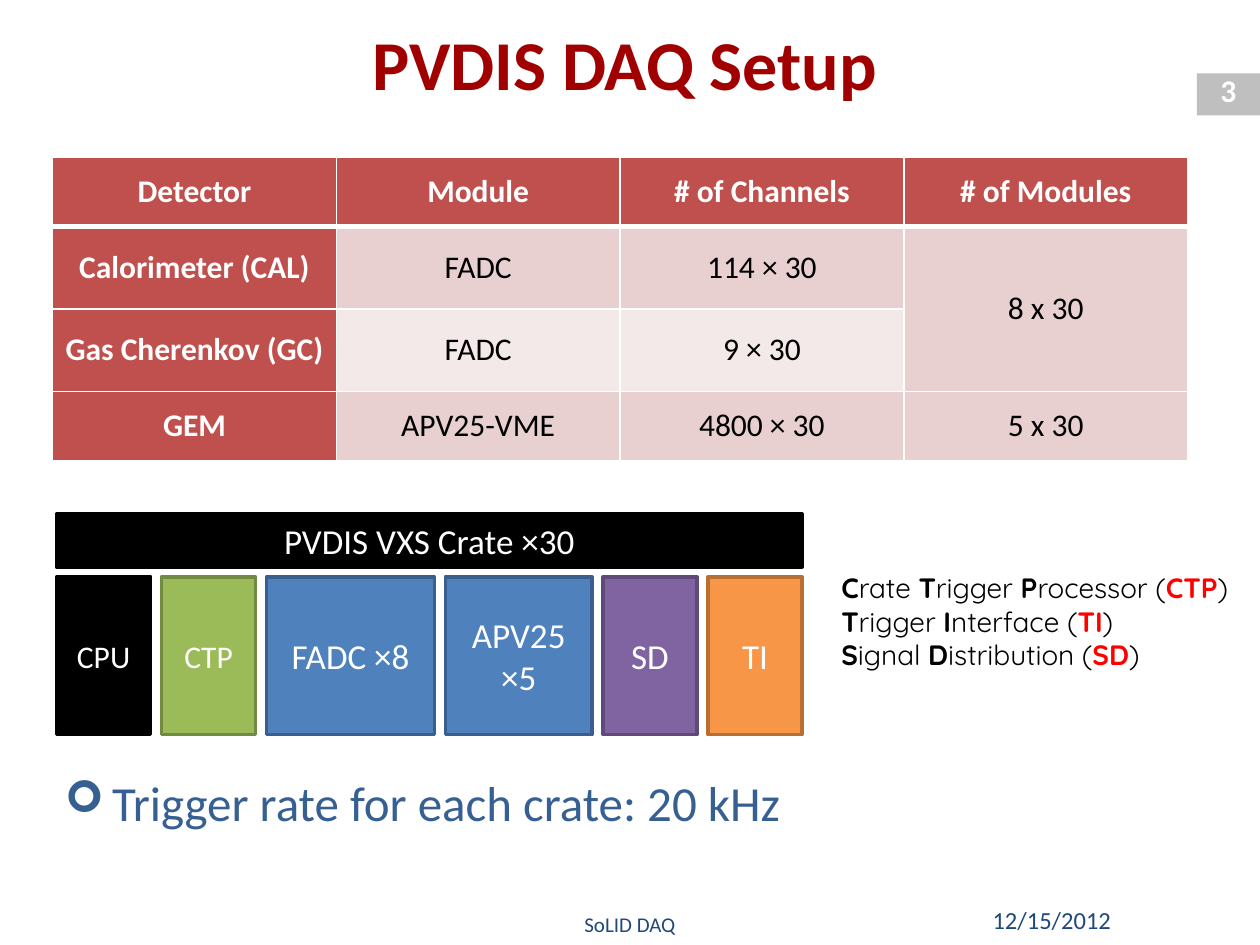
from lxml import etree
from pptx import Presentation
from pptx.dml.color import RGBColor
from pptx.enum.shapes import MSO_SHAPE
from pptx.enum.text import MSO_ANCHOR, PP_ALIGN
from pptx.oxml.ns import qn
from pptx.util import Cm, Pt

RECTANGLE = MSO_SHAPE.RECTANGLE
TOP, MIDDLE = MSO_ANCHOR.TOP, MSO_ANCHOR.MIDDLE
LEFT, CENTER, RIGHT = PP_ALIGN.LEFT, PP_ALIGN.CENTER, PP_ALIGN.RIGHT

WHITE = RGBColor(0xFF, 0xFF, 0xFF)
BLACK = RGBColor(0x00, 0x00, 0x00)
GRAY = RGBColor(0xBF, 0xBF, 0xBF)
TITLE_RED = RGBColor(0xA0, 0x00, 0x00)
LEGEND_RED = RGBColor(0xFF, 0x00, 0x00)
BODY_BLUE = RGBColor(0x37, 0x60, 0x92)
FOOTER_BLUE = RGBColor(0x1F, 0x49, 0x7D)
HEADING_RED = RGBColor(0xC0, 0x50, 0x4D)
BAND_DARK = RGBColor(0xE8, 0xD0, 0xD0)
BAND_LIGHT = RGBColor(0xF4, 0xE9, 0xE9)
BLUE, BLUE_EDGE = RGBColor(0x4F, 0x81, 0xBD), RGBColor(0x3A, 0x5F, 0x8C)
GREEN, GREEN_EDGE = RGBColor(0x9B, 0xBB, 0x59), RGBColor(0x73, 0x8A, 0x42)
PURPLE, PURPLE_EDGE = RGBColor(0x80, 0x64, 0xA2), RGBColor(0x5F, 0x4A, 0x78)
ORANGE, ORANGE_EDGE = RGBColor(0xF7, 0x96, 0x46), RGBColor(0xB7, 0x6F, 0x34)

# Text, box in cm (left, top, width, height), size, colour, bold, alignment, anchor
TITLE = ("PVDIS DAQ Setup", (1.06, 0.21, 23.07, 2.12), 40, TITLE_RED, True, CENTER, MIDDLE)
PAGE_NUMBER = ("3", (24.13, 1.3, 1.27, 1.02), 18, WHITE, True, CENTER, TOP)
TRIGGER_RATE = ("Trigger rate for each crate: 20 kHz", (1.06, 15.45, 23.28, 2.33),
                28, BODY_BLUE, False, LEFT, TOP)
DATE = ("12/15/2012", (19.26, 18.03, 3.39, 1.02), 14, FOOTER_BLUE, False, RIGHT, MIDDLE)
FOOTER = ("SoLID DAQ", (6.14, 18.2, 13.12, 0.85), 12, FOOTER_BLUE, False, CENTER, MIDDLE)

DETECTORS = [
    ("Detector", "Module", "# of Channels", "# of Modules"),
    ("Calorimeter (CAL)", "FADC", "114 × 30", "8 x 30"),
    ("Gas Cherenkov (GC)", "FADC", "9 × 30", ""),
    ("GEM", "APV25-VME", "4800 × 30", "5 x 30"),
]
ROW_HEIGHTS = (1.39, 1.66, 1.66, 1.39)
COLUMN_WIDTH = 5.72

CRATE_LEFT, CRATE_WIDTH = 1.14, 15.03
# Label, width in cm, text size, fill, edge
MODULES = [
    ("CPU", 1.9, 18, BLACK, BLACK),
    ("CTP", 1.9, 18, GREEN, GREEN_EDGE),
    ("FADC ×8", 3.39, 20, BLUE, BLUE_EDGE),
    ("APV25 ×5", 2.96, 20, BLUE, BLUE_EDGE),
    ("SD", 1.9, 20, PURPLE, PURPLE_EDGE),
    ("TI", 1.9, 20, ORANGE, ORANGE_EDGE),
]
LEGEND = [
    ("Crate Trigger Processor", "CTP"),
    ("Trigger Interface", "TI"),
    ("Signal Distribution", "SD"),
]


def style(font, size, color, bold=False, name="Calibri"):
    font.name, font.size, font.bold = name, Pt(size), bold
    font.color.rgb = color


def add_text(slide, text, box, size, color, bold, alignment, anchor):
    frame = slide.shapes.add_textbox(*map(Cm, box)).text_frame
    frame.word_wrap = True
    frame.vertical_anchor = anchor
    paragraph = frame.paragraphs[0]
    paragraph.text = text
    paragraph.alignment = alignment
    style(paragraph.font, size, color, bold)
    return paragraph


def add_block(shapes, box, fill, edge=None, text="", size=20):
    """Add a filled rectangle, with an outline and a centred label if given."""
    shape = shapes.add_shape(RECTANGLE, *map(Cm, box))
    shape.shadow.inherit = False
    shape.fill.solid()
    shape.fill.fore_color.rgb = fill
    if edge is None:
        shape.line.fill.background()
    else:
        shape.line.color.rgb = edge
        shape.line.width = Pt(2)
    if text:
        frame = shape.text_frame
        frame.word_wrap = True
        frame.vertical_anchor = MIDDLE
        paragraph = frame.paragraphs[0]
        paragraph.text = text
        paragraph.alignment = CENTER
        style(paragraph.font, size, WHITE)


def set_indent(paragraph, left, first_line=0):
    properties = paragraph._p.get_or_add_pPr()
    properties.set("marL", str(Cm(left)))
    properties.set("indent", str(Cm(first_line)))
    return properties


def add_bullet(paragraph, character, percent):
    properties = set_indent(paragraph, 0.95, -0.95)
    etree.SubElement(properties, qn("a:buSzPct"), val=str(percent * 1000))
    etree.SubElement(properties, qn("a:buFont"), typeface="Wingdings")
    etree.SubElement(properties, qn("a:buChar"), char=character)


def set_borders(cell, row):
    widths = {"lnL": 1, "lnR": 1, "lnT": 3 if row == 1 else 1, "lnB": 3 if row == 0 else 1}
    for side, width in widths.items():
        line = etree.SubElement(cell._tc.get_or_add_tcPr(), qn(f"a:{side}"), w=str(Pt(width)))
        fill = etree.SubElement(line, qn("a:solidFill"))
        etree.SubElement(fill, qn("a:srgbClr"), val=str(WHITE))


def add_detector_table(slide):
    columns = len(DETECTORS[0])
    table = slide.shapes.add_table(
        len(DETECTORS), columns, Cm(1.06), Cm(3.18),
        Cm(COLUMN_WIDTH * columns), Cm(sum(ROW_HEIGHTS))).table
    for column in table.columns:
        column.width = Cm(COLUMN_WIDTH)
    for row, values in enumerate(DETECTORS):
        table.rows[row].height = Cm(ROW_HEIGHTS[row])
        for column, value in enumerate(values):
            heading = row == 0 or column == 0
            cell = table.cell(row, column)
            set_borders(cell, row)
            cell.fill.solid()
            band = BAND_DARK if row % 2 else BAND_LIGHT
            if row == len(DETECTORS) - 1:
                band = BAND_DARK
            cell.fill.fore_color.rgb = HEADING_RED if heading else band
            cell.vertical_anchor = MIDDLE
            paragraph = cell.text_frame.paragraphs[0]
            paragraph.text = value
            paragraph.alignment = CENTER
            style(paragraph.font, 18, WHITE if heading else BLACK, heading)
    table.cell(1, 3).merge(table.cell(2, 3))


def add_crate(slide):
    shapes = slide.shapes.add_group_shape().shapes
    add_block(shapes, (CRATE_LEFT, 10.36, CRATE_WIDTH, 1.07), BLACK, BLACK, "PVDIS VXS Crate ×30")
    gap = (CRATE_WIDTH - sum(module[1] for module in MODULES)) / (len(MODULES) - 1)
    left = CRATE_LEFT
    for label, width, size, fill, edge in MODULES:
        add_block(shapes, (left, 11.63, width, 3.18), fill, edge, label, size)
        left += width + gap


def add_legend(slide):
    """Spell out the abbreviations, with the initials in bold."""
    frame = slide.shapes.add_textbox(Cm(15.44), Cm(11.38), Cm(9.73), Cm(2.31)).text_frame
    frame.word_wrap = True
    for index, (name, abbreviation) in enumerate(LEGEND):
        paragraph = frame.add_paragraph() if index else frame.paragraphs[0]
        set_indent(paragraph, 1.27)
        parts = []
        for word in name.split():
            parts += [(word[0], BLACK, True), (word[1:] + " ", BLACK, False)]
        parts[-1] = (parts[-1][0] + "(", BLACK, False)
        parts += [(abbreviation, LEGEND_RED, True), (")", BLACK, False)]
        for text, color, bold in parts:
            run = paragraph.add_run()
            run.text = text
            style(run.font, 16, color, bold, "Quicksand")


def main():
    presentation = Presentation()
    presentation.slide_width, presentation.slide_height = Cm(25.4), Cm(19.05)
    slide = presentation.slides.add_slide(presentation.slide_layouts[6])
    add_block(slide.shapes, (24.13, 1.48, 1.27, 0.85), GRAY)
    for item in (PAGE_NUMBER, TITLE, DATE, FOOTER):
        add_text(slide, *item)
    add_bullet(add_text(slide, *TRIGGER_RATE), "➢", 90)
    add_detector_table(slide)
    add_crate(slide)
    add_legend(slide)
    presentation.save("out.pptx")


if __name__ == "__main__":
    main()
